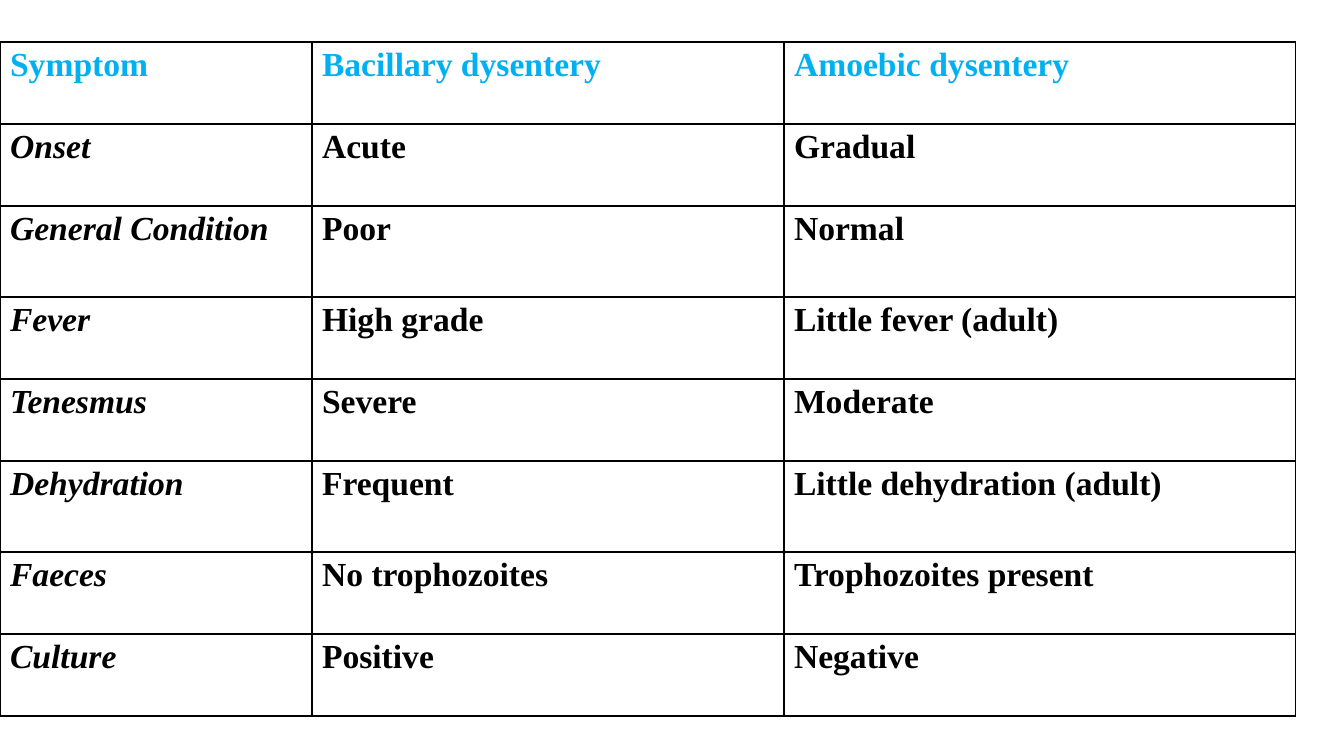
import pptx
import pptx.dml.color
import pptx.oxml
import pptx.oxml.ns
import pptx.util

PX = 914400 / 100.8
FONT = "Times New Roman"
COLUMN_WIDTHS = [312, 472, 512]
ROW_HEIGHT = 82
TALL_ROW_HEIGHT = 91
TALL_ROWS = ("General Condition", "Dehydration")
SYMPTOMS = [
    ("Symptom", "Bacillary dysentery", "Amoebic dysentery"),
    ("Onset", "Acute", "Gradual"),
    ("General Condition", "Poor", "Normal"),
    ("Fever", "High grade", "Little fever (adult)"),
    ("Tenesmus", "Severe", "Moderate"),
    ("Dehydration", "Frequent", "Little dehydration (adult)"),
    ("Faeces", "No trophozoites", "Trophozoites present"),
    ("Culture", "Positive", "Negative"),
]


def px(n):
    """Turn pixels into EMU."""
    return pptx.util.Emu(round(n * PX))


def color(hex_string):
    """Turn a hex string into a colour."""
    return pptx.dml.color.RGBColor.from_string(hex_string)


def set_borders(cell, hex_string, width):
    """Draw a solid line on all four sides of a cell."""
    tcPr = cell._tc.get_or_add_tcPr()
    for i, side in enumerate(("lnL", "lnR", "lnT", "lnB")):
        tcPr.insert(i, pptx.oxml.parse_xml(
            f'<a:{side} {pptx.oxml.ns.nsdecls("a")} w="{pptx.util.Pt(width)}">'
            f'<a:solidFill><a:srgbClr val="{hex_string}"/></a:solidFill>'
            f'</a:{side}>'))


def fill_cell(cell, text, hex_string, italic):
    """Write and format one table cell."""
    cell.fill.solid()
    cell.fill.fore_color.rgb = color("FFFFFF")
    set_borders(cell, "000000", 1)
    p = cell.text_frame.paragraphs[0]
    p.text = text
    font = p.runs[0].font
    font.name = FONT
    font.size = pptx.util.Pt(24)
    font.bold = True
    font.italic = italic
    font.color.rgb = color(hex_string)


def add_symptom_table(s, left, top):
    """Place the comparison table with its corner at left, top."""
    heights = [TALL_ROW_HEIGHT if row[0] in TALL_ROWS else ROW_HEIGHT
               for row in SYMPTOMS]
    table = s.shapes.add_table(
        len(SYMPTOMS), len(COLUMN_WIDTHS), px(left), px(top),
        px(sum(COLUMN_WIDTHS)), px(sum(heights))).table
    table.horz_banding = False
    for column, width in zip(table.columns, COLUMN_WIDTHS):
        column.width = px(width)
    for i, (texts, height) in enumerate(zip(SYMPTOMS, heights)):
        table.rows[i].height = px(height)
        for j, text in enumerate(texts):
            fill_cell(table.cell(i, j), text,
                      "00B0F0" if i == 0 else "000000", i > 0 and j == 0)


def main():
    """Build and save the slide."""
    prs = pptx.Presentation()
    prs.slide_width, prs.slide_height = px(1344), px(756)
    s = prs.slides.add_slide(prs.slide_layouts[6])
    add_symptom_table(s, 0, 42)
    prs.save("out.pptx")


if __name__ == "__main__":
    main()
